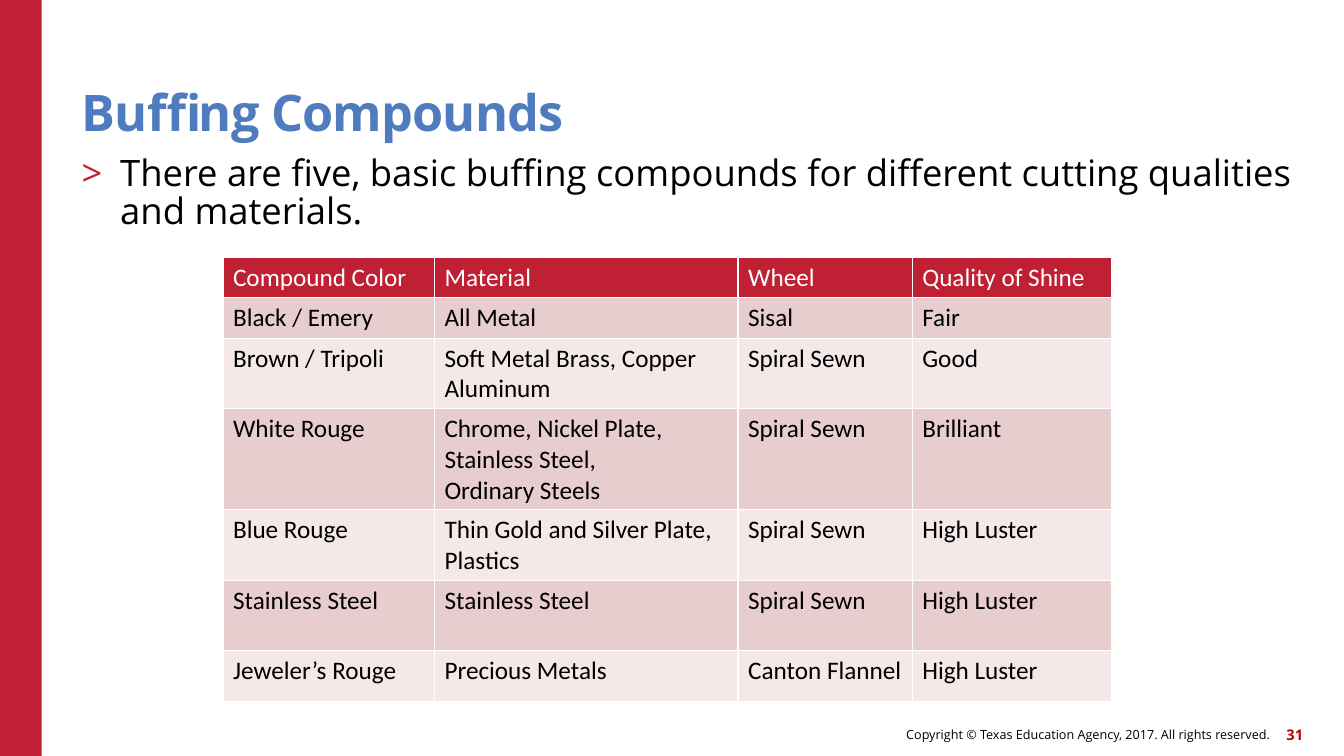
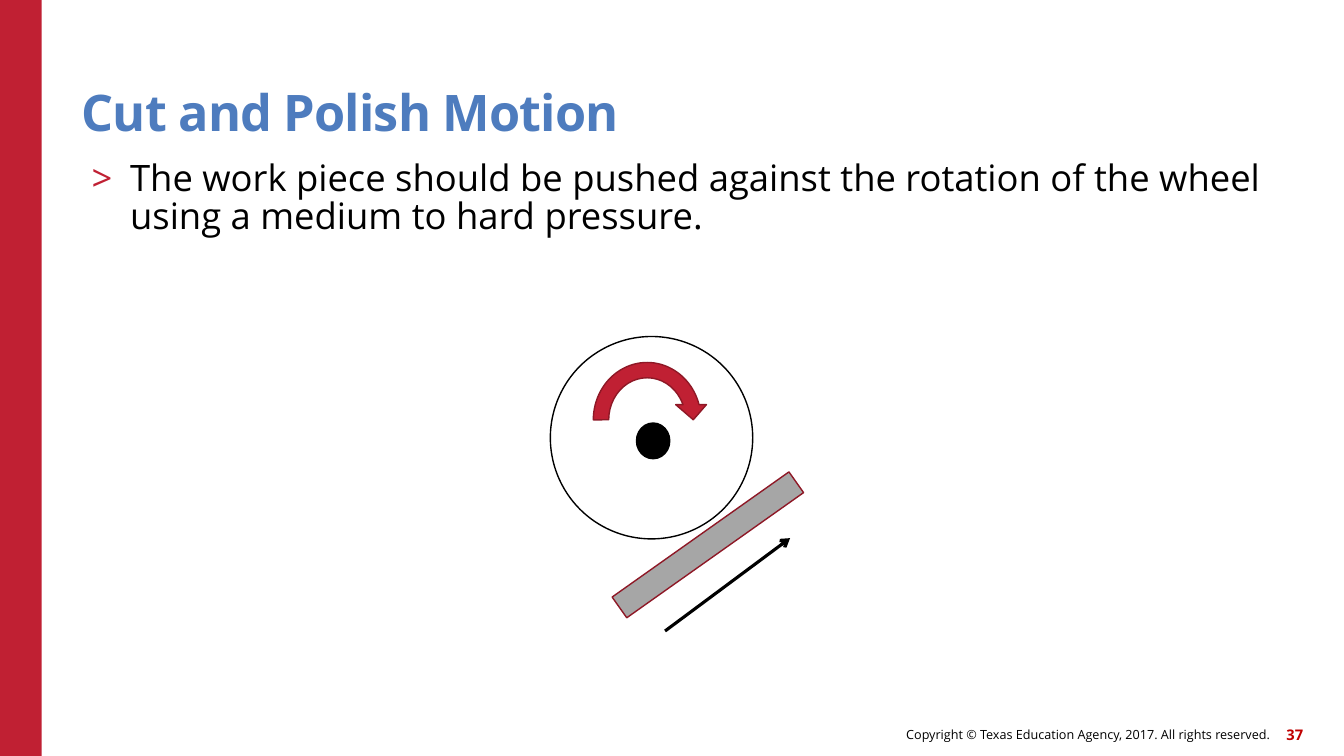
from lxml.etree import SubElement
from pptx import Presentation
from pptx.dml.color import RGBColor
from pptx.enum.shapes import MSO_CONNECTOR as Connector, MSO_SHAPE as Shape
from pptx.enum.text import MSO_ANCHOR as Anchor, PP_ALIGN as Align
from pptx.oxml.ns import qn
from pptx.util import Cm, Pt

RED = RGBColor(0xC0, 0x20, 0x33)
DARK_RED = RGBColor(0x8E, 0x18, 0x26)
NUMBER_RED = RGBColor(0xC0, 0x00, 0x00)
BLUE = RGBColor(0x4E, 0x7C, 0xBE)
BLACK = RGBColor(0, 0, 0)
WHITE = RGBColor(0xFF, 0xFF, 0xFF)
GRAY = RGBColor(0xA6, 0xA6, 0xA6)
PINK = RGBColor(0xE8, 0xCD, 0xCE)
PALE_PINK = RGBColor(0xF4, 0xE8, 0xE8)
FONT = "Open Sans"
TABLE_FONT = "Calibri"
LEFT = Cm(2.06)
HANGING = Cm(0.97)

deck = Presentation()
deck.slide_width, deck.slide_height = Cm(33.87), Cm(19.05)


def write(box, text, size, color, bold=False, anchor=Anchor.TOP, inset=(0, 0)):
    """Fill a box with one styled paragraph and return that paragraph."""
    frame = box.text_frame
    frame.word_wrap = True
    frame.vertical_anchor = anchor
    frame.margin_left = frame.margin_right = inset[0]
    frame.margin_top = frame.margin_bottom = inset[1]
    frame.text = text
    para = frame.paragraphs[0]
    font = para.runs[0].font
    font.name, font.size, font.bold = FONT, Pt(size), bold
    font.color.rgb = color
    return para


def add_figure(shapes, kind, left, top, width, height, fill, line=None):
    figure = shapes.add_shape(kind, Cm(left), Cm(top), Cm(width), Cm(height))
    figure.shadow.inherit = False
    figure.fill.solid()
    figure.fill.fore_color.rgb = fill
    if line is None:
        figure.line.fill.background()
    else:
        figure.line.color.rgb = line
        figure.line.width = Pt(1)
    return figure


# Parts common to both slides: band, footer, title and bulleted statement
contents = [
    ("Buffing Compounds", "31", (0, 0),
     "There are five, basic buffing compounds for different cutting qualities and materials."),
    ("Cut and Polish Motion", "37", (Cm(0.25), Cm(0.13)),
     "The work piece should be pushed against the rotation of the wheel "
     "using a medium to hard pressure."),
]
pages = []
for title_text, number, inset, statement in contents:
    page = deck.slides.add_slide(deck.slide_layouts[5])
    pages.append(page)
    add_figure(page.shapes, Shape.RECTANGLE, 0, 0, 1.05, 19.05, RED)

    copyright_box = page.shapes.add_textbox(Cm(15.6), Cm(18.1), Cm(16.4), Cm(0.8))
    para = write(copyright_box, "Copyright © Texas Education Agency, 2017. All rights reserved.",
                 9, BLACK, anchor=Anchor.MIDDLE)
    para.alignment = Align.RIGHT
    number_box = page.shapes.add_textbox(Cm(31.78), Cm(18.1), Cm(1.06), Cm(0.8))
    para = write(number_box, number, 10.5, NUMBER_RED, bold=True, anchor=Anchor.MIDDLE)
    para.alignment = Align.RIGHT

    title = page.shapes.title
    title.left, title.top, title.width, title.height = LEFT, Cm(1.14), Cm(27.94), Cm(2.44)
    para = write(title, title_text, 36, BLUE, bold=True, anchor=Anchor.BOTTOM)
    para.alignment = Align.LEFT
    para.line_spacing = 0.9
    para.runs[0].font._element.set("spc", "-60")

    body = page.shapes.add_textbox(LEFT, Cm(3.94), Cm(30.71), Cm(13.16))
    para = write(body, statement, 26, BLACK, inset=inset)
    para.line_spacing = 0.87
    settings = para._p.get_or_add_pPr()
    settings.set("marL", str(HANGING))
    settings.set("indent", str(-HANGING))
    bullet_color = SubElement(settings, qn("a:buClr"))
    SubElement(bullet_color, qn("a:srgbClr"), val=str(RED))
    SubElement(settings, qn("a:buFont"), typeface=FONT)
    SubElement(settings, qn("a:buChar"), char=">")

compounds_page, motion_page = pages

# Table of compounds
rows = [
    ("Compound Color", "Material", "Wheel", "Quality of Shine"),
    ("Black / Emery", "All Metal", "Sisal", "Fair"),
    ("Brown / Tripoli", "Soft Metal Brass, Copper Aluminum", "Spiral Sewn", "Good"),
    ("White Rouge", "Chrome, Nickel Plate, Stainless Steel,\nOrdinary Steels",
     "Spiral Sewn", "Brilliant"),
    ("Blue Rouge", "Thin Gold and Silver Plate, Plastics", "Spiral Sewn", "High Luster"),
    ("Stainless Steel", "Stainless Steel", "Spiral Sewn", "High Luster"),
    ("Jeweler’s Rouge", "Precious Metals", "Canton Flannel", "High Luster"),
]
column_widths = [5.33, 7.65, 4.39, 5.03]
row_heights = [1.02, 1.02, 1.78, 2.54, 1.78, 1.78, 1.27]
table = compounds_page.shapes.add_table(
    len(rows), len(column_widths), Cm(5.62), Cm(6.48),
    Cm(sum(column_widths)), Cm(sum(row_heights))).table
for column, width in zip(table.columns, column_widths):
    column.width = Cm(width)
for row_index, (row, height, texts) in enumerate(zip(table.rows, row_heights, rows)):
    row.height = Cm(height)
    if row_index == 0:
        fill, color = RED, WHITE
    else:
        fill, color = (PINK if row_index % 2 else PALE_PINK), BLACK
    for cell, text in zip(row.cells, texts):
        cell.text_frame.text = text
        for para in cell.text_frame.paragraphs:
            font = para.runs[0].font
            font.name, font.size, font.bold = TABLE_FONT, Pt(18), False
            font.color.rgb = color
        # Borders come before the fill in the cell's properties
        cell_settings = cell._tc.get_or_add_tcPr()
        for side in ("a:lnL", "a:lnR", "a:lnT", "a:lnB"):
            border = SubElement(cell_settings, qn(side), w=str(Pt(1)))
            border_fill = SubElement(border, qn("a:solidFill"))
            SubElement(border_fill, qn("a:srgbClr"), val=str(WHITE))
        cell.fill.solid()
        cell.fill.fore_color.rgb = fill

# Wheel turning against the work piece
drawing = motion_page.shapes.add_group_shape().shapes
add_figure(drawing, Shape.OVAL, 13.87, 8.48, 5.1, 5.1, WHITE, BLACK)
add_figure(drawing, Shape.OVAL, 16.04, 10.66, 0.84, 0.9, BLACK, BLACK)
add_figure(drawing, Shape.CIRCULAR_ARROW, 14.76, 8.94, 3.1, 3.28, RED, DARK_RED)
work_piece = add_figure(drawing, Shape.RECTANGLE, 15.11, 13.41, 5.46, 0.64, GRAY, DARK_RED)
work_piece.rotation = 324.7

push = drawing.add_connector(Connector.STRAIGHT, Cm(16.76), Cm(15.9), Cm(19.91), Cm(13.56))
push.line.color.rgb = BLACK
push.line.width = Pt(2.25)
SubElement(push.line._get_or_add_ln(), qn("a:tailEnd"), type="arrow")
SubElement(push._element.spPr, qn("a:effectLst"))

deck.save("out.pptx")
